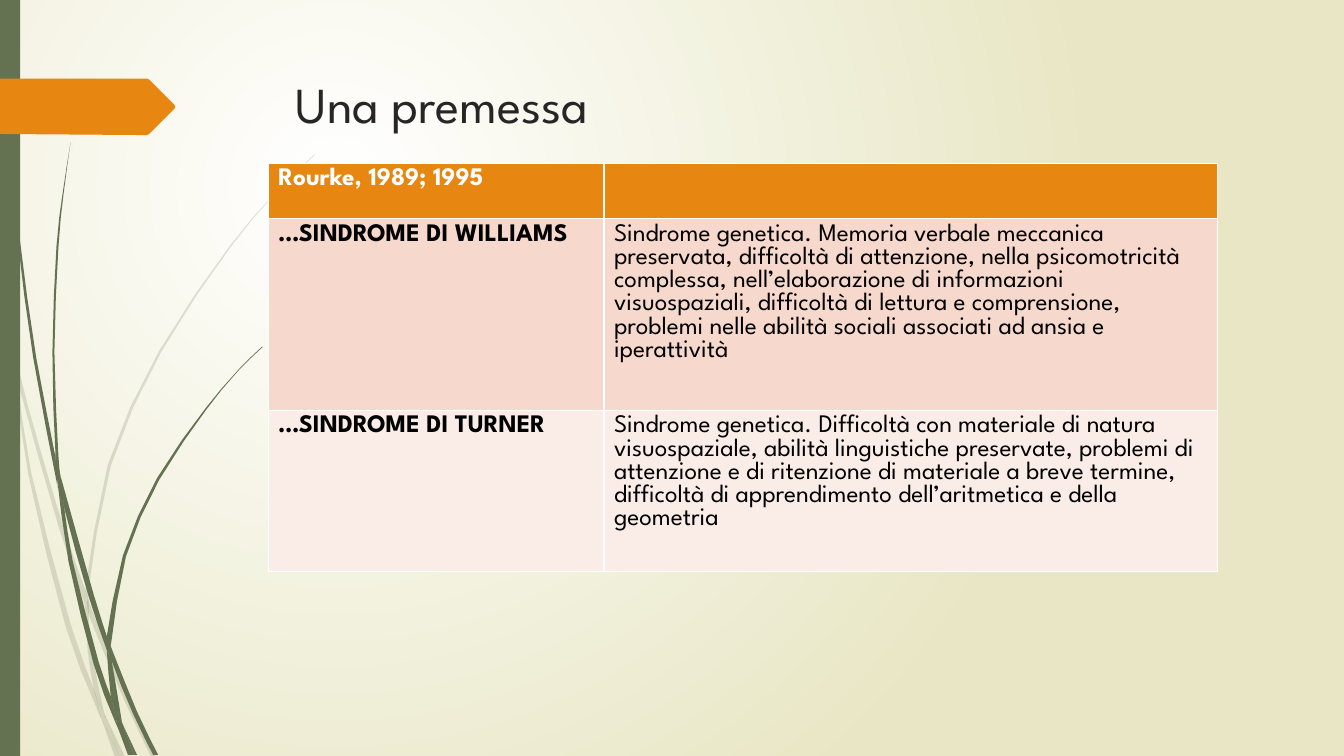
from lxml.etree import SubElement
from pptx import Presentation
from pptx.dml.color import RGBColor
from pptx.enum.lang import MSO_LANGUAGE_ID
from pptx.enum.shapes import MSO_SHAPE
from pptx.oxml.ns import qn
from pptx.util import Cm, Pt

COLORS = {
    "white": "FFFFFF", "cream": "E8E6C4", "green": "647252", "orange": "E78712",
    "title": "262626", "black": "000000", "peach": "F6D9CC", "blush": "FAEDE7",
}
FONT = "League Spartan"
GRID = 0.0254  # centimetres per unit of the blade coordinates


def smooth(knots):
    """Return the knots with a Catmull-Rom midpoint between each two."""
    padded = [knots[0], *knots, knots[-1]]
    points = []
    for a, b, c, d in zip(padded, padded[1:], padded[2:], padded[3:]):
        points += [b, tuple((9 * (q + r) - p - s) / 16 for p, q, r, s in zip(a, b, c, d))]
    return points + [knots[-1]]


def add_outline(page, points, color):
    """Add a closed, filled outline whose points are in grid units."""
    corners = [(Cm(x * GRID), Cm(y * GRID)) for x, y in points]
    builder = page.shapes.build_freeform(*corners[0])
    builder.add_line_segments(corners[1:])
    outline = builder.convert_to_shape()
    outline.shadow.inherit = False
    outline.fill.solid()
    outline.fill.fore_color.rgb = RGBColor.from_string(COLORS[color])
    outline.line.fill.background()
    return outline


deck = Presentation()
deck.slide_width, deck.slide_height = Cm(33.87), Cm(19.05)
page = deck.slides.add_slide(deck.slide_layouts[6])

# Radial background
background = page.background.fill
background.gradient()
for stop, color in zip(background.gradient_stops, ("white", "cream")):
    stop.color.rgb = RGBColor.from_string(COLORS[color])
gradient = page.element.find(".//" + qn("a:gradFill"))
gradient.remove(gradient.find(qn("a:lin")))
circle = SubElement(gradient, qn("a:path"), {"path": "circle"})
SubElement(circle, qn("a:fillToRect"), l="50000", t="50000", r="100000", b="100000")

# Grass blade sections: left edge and right edge, both from top to bottom
pale_sections = [
    ([(0, 282), (0, 299), (10, 344), (11, 350)], [(0, 282), (9, 322), (11, 350)]),
    ([(14, 345), (17, 376), (58, 522), (84, 599)],
     [(14, 345), (28, 404), (62, 520), (85, 586)]),
    ([(88, 596), (88, 610), (123, 694), (150, 751)],
     [(88, 596), (92, 607), (127, 692), (155, 751)]),
    ([(105, 711), (119, 751)], [(105, 711), (124, 751)]),
    ([(11, 350), (28, 470), (65, 621), (92, 693), (101, 714)],
     [(11, 350), (17, 376), (31, 469), (70, 619), (93, 683), (99, 707), (101, 714)]),
    ([(84, 599), (87, 646), (93, 683), (96, 692), (105, 711)],
     [(84, 599), (88, 608), (88, 610), (91, 646), (103, 706), (105, 711)]),
    ([(312, 153), (289, 175), (268, 197), (228, 244), (158, 348), (107, 461),
      (85, 584), (85, 586)],
     [(312, 154), (290, 175), (268, 198), (229, 245), (160, 349), (110, 462),
      (88, 584), (88, 596)]),
    ([(101, 714), (114, 751)], [(101, 714), (119, 751)]),
    ([(85, 586), (84, 599)], [(85, 586), (88, 596), (88, 610), (88, 608)]),
    ([(93, 683), (99, 707), (101, 714), (119, 751)],
     [(93, 683), (96, 692), (105, 711), (119, 751)]),
]
solid_sections = [
    ([(3, 0), (4, 48), (7, 110), (17, 233), (33, 355), (56, 477), (57, 481)],
     [(4, 0), (5, 48), (8, 109), (19, 232), (36, 355), (55, 453), (57, 481)]),
    ([(60, 472), (64, 505), (88, 592), (106, 645)],
     [(60, 472), (93, 590), (106, 631), (106, 633)]),
    ([(110, 641), (111, 656), (132, 708), (152, 749)],
     [(110, 641), (113, 649), (136, 706), (157, 749)]),
    ([(57, 477), (68, 557), (93, 659), (111, 708), (117, 722)],
     [(57, 477), (64, 505), (72, 556), (98, 657), (110, 691), (116, 717), (117, 722)]),
    ([(70, 141), (62, 193), (56, 245), (52, 349), (55, 449), (60, 472)],
     [(70, 141), (63, 193), (58, 245), (54, 349), (58, 453), (60, 472)]),
    ([(122, 719), (133, 749)], [(122, 719), (136, 749)]),
    ([(55, 449), (55, 453), (57, 477), (64, 505)], [(55, 449), (60, 472), (64, 505)]),
    ([(260, 344), (245, 358), (231, 373), (204, 405), (156, 474), (122, 551), (106, 631)],
     [(261, 344), (245, 359), (231, 374), (205, 406), (158, 476), (125, 552),
      (111, 633), (110, 641)]),
    ([(117, 722), (127, 749)], [(117, 722), (131, 749)]),
    ([(106, 645), (110, 691), (116, 706), (122, 719)],
     [(106, 645), (109, 651), (111, 656), (121, 716), (122, 719)]),
    ([(106, 631), (106, 645)], [(106, 631), (110, 641), (111, 656), (109, 651)]),
    ([(110, 691), (116, 717), (117, 722), (130, 749)],
     [(110, 691), (116, 706), (122, 719), (133, 749)]),
]
for sections, opacity in ((pale_sections, 20), (solid_sections, 100)):
    for left_edge, right_edge in sections:
        blade = add_outline(page, smooth(left_edge) + smooth(right_edge)[::-1], "green")
        if opacity < 100:
            tint = blade.element.spPr.find(".//" + qn("a:srgbClr"))
            SubElement(tint, qn("a:alpha"), val=str(opacity * 1000))

side_bar = page.shapes.add_shape(MSO_SHAPE.RECTANGLE, 0, 0, Cm(0.51), deck.slide_height)
side_bar.shadow.inherit = False
side_bar.fill.solid()
side_bar.fill.fore_color.rgb = RGBColor.from_string(COLORS["green"])
side_bar.line.fill.background()

add_outline(page, [(0, 78), (146, 78), (148, 79), (173, 104), (174, 106), (173, 108),
                   (148, 133), (146, 134), (136, 134), (0, 133)], "orange")

# Title
title = page.shapes.add_textbox(Cm(7.21), Cm(1.73), Cm(24.77), Cm(3.56))
title.text_frame.word_wrap = True
para = title.text_frame.paragraphs[0]
para.text = "Una premessa"
para.font.name, para.font.size = FONT, Pt(36)
para.font.color.rgb = RGBColor.from_string(COLORS["title"])

# Table: fill, text color, row height, cell texts
rows = [
    ("orange", "white", 1.4, ("Rourke, 1989; 1995", "")),
    ("peach", "black", 4.36, (
        "…SINDROME DI WILLIAMS",
        "Sindrome genetica. Memoria verbale meccanica preservata, difficoltà di "
        "attenzione, nella psicomotricità complessa, nell’elaborazione di informazioni "
        "visuospaziali, difficoltà di lettura e comprensione, problemi nelle abilità "
        "sociali associati ad ansia e iperattività")),
    ("blush", "black", 3.8, (
        "…SINDROME DI TURNER",
        "Sindrome genetica. Difficoltà con materiale di natura visuospaziale, abilità "
        "linguistiche preservate, problemi di attenzione e di ritenzione di materiale a "
        "breve termine, difficoltà di apprendimento dell’aritmetica e della geometria")),
]
widths = (8.46, 15.47)
table = page.shapes.add_table(len(rows), len(widths), Cm(6.76), Cm(4.11), Cm(sum(widths)),
                              Cm(sum(row[2] for row in rows))).table
for column, width in zip(table.columns, widths):
    column.width = Cm(width)
for row_index, (fill, text_color, height, texts) in enumerate(rows):
    table.rows[row_index].height = Cm(height)
    for column_index, text in enumerate(texts):
        cell = table.cell(row_index, column_index)
        cell.fill.solid()
        cell.fill.fore_color.rgb = RGBColor.from_string(COLORS[fill])
        if text:
            # Row heights follow the fonts of the runs
            span = cell.text_frame.paragraphs[0].add_run()
            span.text = text
            span.font.name, span.font.size = FONT, Pt(18)
            span.font.bold = column_index == 0
            span.font.language_id = MSO_LANGUAGE_ID.ITALIAN
            span.font.color.rgb = RGBColor.from_string(COLORS[text_color])

deck.save("out.pptx")
